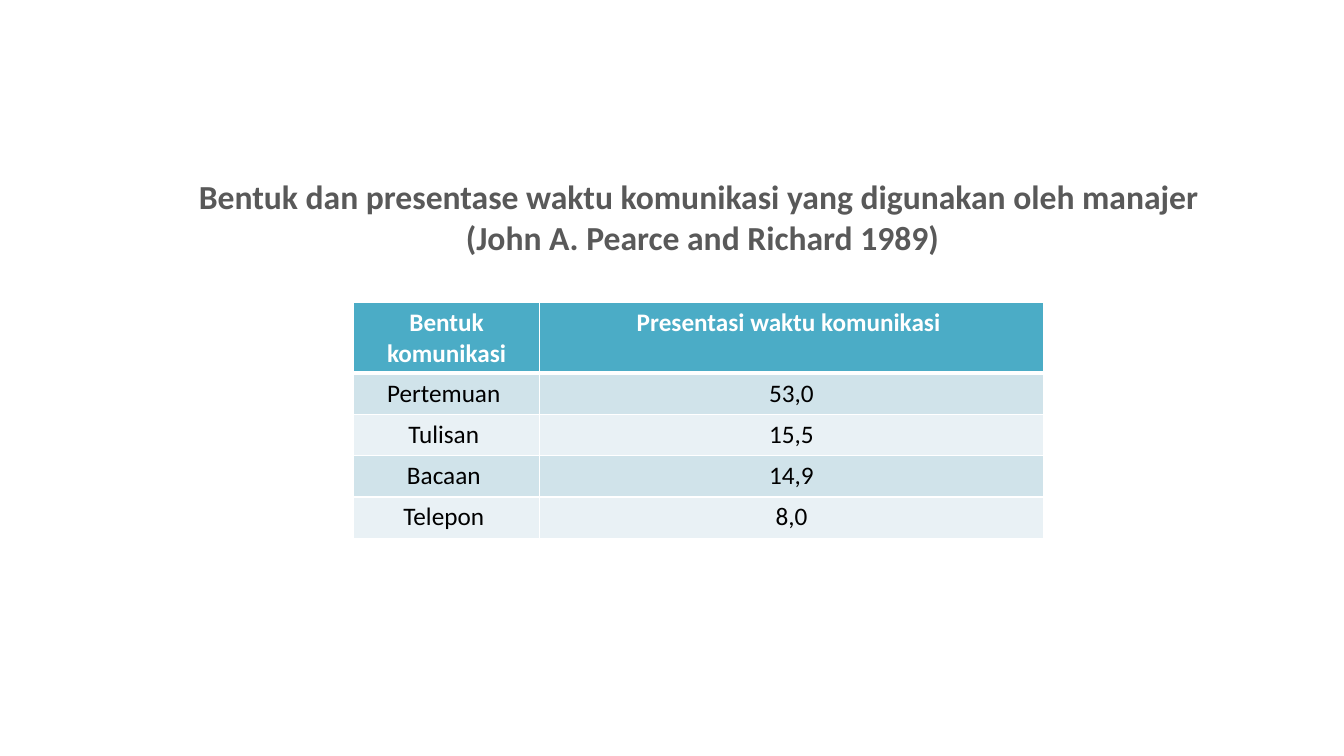
"""Build a slide with a table of the time managers spend on each form of communication."""
from dataclasses import dataclass

from lxml import etree
from pptx import Presentation
from pptx.dml.color import RGBColor
from pptx.enum import text as t
from pptx.oxml import ns
from pptx.util import Inches, Pt

WHITE = RGBColor(0xFF, 0xFF, 0xFF)
BLACK = RGBColor(0x00, 0x00, 0x00)
GRAY = RGBColor(0x59, 0x59, 0x59)
TEAL = RGBColor(0x4B, 0xAC, 0xC6)
BANDS = (RGBColor(0xD0, 0xE3, 0xEA), RGBColor(0xE9, 0xF1, 0xF5))
FONT = "Calibri"
WIDTHS = (1.84, 5)


@dataclass(frozen=True)
class Row:
    form: str
    share: str
    high: float = 0.41
    head: bool = False


TITLE = (
    "Bentuk dan presentase waktu komunikasi yang digunakan oleh manajer",
    " (John A. Pearce and Richard 1989)",
)
ROWS = (
    Row("Bentuk komunikasi", "Presentasi waktu komunikasi ", 0.7, True),
    Row("Pertemuan ", "53,0"),
    Row("Tulisan ", "15,5"),
    Row("Bacaan ", "14,9"),
    Row("Telepon ", "8,0"),
)


def add_run(para, words: str, size: int, color: RGBColor, bold: bool) -> None:
    para.alignment = t.PP_ALIGN.CENTER
    run = para.add_run()
    run.text = words
    run.font.name = FONT
    run.font.size = Pt(size)
    run.font.bold = bold
    run.font.color.rgb = color


def add_edges(cell, base: int) -> None:
    props = cell._tc.get_or_add_tcPr()
    sides = (("L", 1), ("R", 1), ("T", 1), ("B", base))
    for spot, (side, width) in enumerate(sides):
        line = etree.Element(ns.qn(f"a:ln{side}"), w=str(Pt(width)))
        fill = etree.SubElement(line, ns.qn("a:solidFill"))
        etree.SubElement(fill, ns.qn("a:srgbClr"), val=str(WHITE))
        props.insert(spot, line)


def add_title(slide) -> None:
    box = slide.shapes.add_textbox(Inches(1.42), Inches(1.7), Inches(11.02), Inches(0.47))
    frame = box.text_frame
    frame.word_wrap = True
    frame.vertical_anchor = t.MSO_ANCHOR.TOP
    para = frame.paragraphs[0]
    add_run(para, TITLE[0], 24, GRAY, True)
    para.add_line_break()
    add_run(para, TITLE[1], 24, GRAY, True)


def add_grid(slide) -> None:
    high = sum(row.high for row in ROWS)
    grid = slide.shapes.add_table(
        len(ROWS), len(WIDTHS), Inches(3.51), Inches(3), Inches(sum(WIDTHS)), Inches(high)
    ).table
    for col, width in zip(grid.columns, WIDTHS):
        col.width = Inches(width)
    for i, row in enumerate(ROWS):
        grid.rows[i].height = Inches(row.high)
        for j, words in enumerate((row.form, row.share)):
            cell = grid.cell(i, j)
            cell.fill.solid()
            cell.fill.fore_color.rgb = TEAL if row.head else BANDS[(i - 1) % 2]
            add_edges(cell, 3 if row.head else 1)
            color = WHITE if row.head else BLACK
            add_run(cell.text_frame.paragraphs[0], words, 18, color, row.head)


def main() -> None:
    deck = Presentation()
    deck.slide_width = Inches(13.33)
    deck.slide_height = Inches(7.5)
    slide = deck.slides.add_slide(deck.slide_layouts[6])
    add_title(slide)
    add_grid(slide)
    deck.save("out.pptx")


if __name__ == "__main__":
    main()
